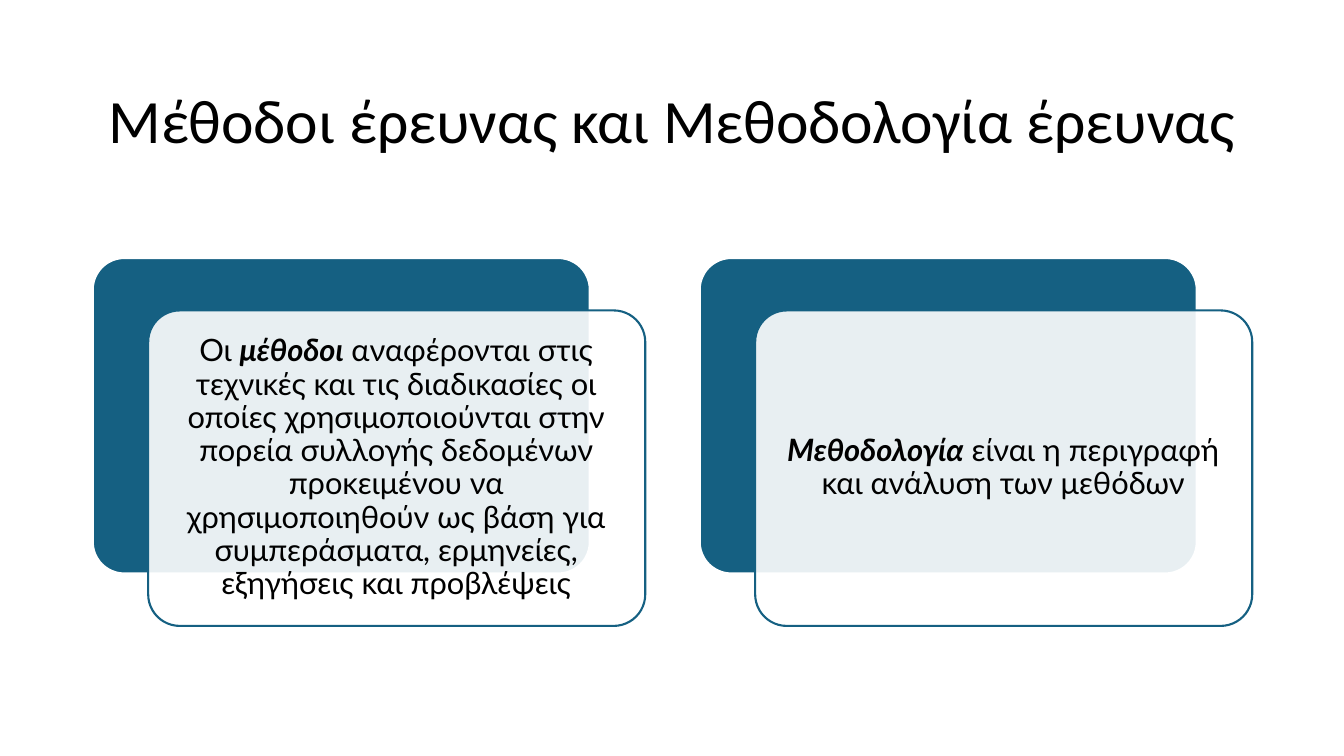
from lxml import etree
from pptx import Presentation
from pptx import util as u
from pptx.dml.color import RGBColor
from pptx.enum import shapes, text
from pptx.oxml.ns import qn

BLUE, WHITE, BLACK = "156082", "FFFFFF", "000000"
TITLE = {"name": "Calibri", "size": u.Pt(44)}
BODY = {"name": "Lato", "size": u.Pt(22)}
STRONG = {**BODY, "bold": True, "italic": True}

CARDS = [
    [("Οι ", BODY), ("μέθοδοι", STRONG),
     (" αναφέρονται στις τεχνικές και τις διαδικασίες οι οποίες "
      "χρησιμοποιούνται στην πορεία συλλογής δεδομένων προκειμένου να "
      "χρησιμοποιηθούν ως βάση για συμπεράσματα, ερμηνείες, εξηγήσεις "
      "και προβλέψεις", BODY)],
    [("Μεθοδολογία", STRONG),
     (" είναι η περιγραφή και ανάλυση των μεθόδων", BODY)],
]


def color(code):
    return RGBColor.from_string(code)


def add_box(slide, left, top, fill, line, alpha=None):
    """Rounded panel, with opacity in percent if given."""
    box = slide.shapes.add_shape(
        shapes.MSO_SHAPE.ROUNDED_RECTANGLE, u.Inches(left), u.Inches(top),
        u.Inches(4.93), u.Inches(3.13))
    box.adjustments[0] = 0.1
    box.shadow.inherit = False
    box.fill.solid()
    box.fill.fore_color.rgb = color(fill)
    box.line.color.rgb = color(line)
    box.line.width = u.Pt(1.5)
    if alpha:
        tint = box.fill._xPr.find(qn("a:solidFill"))[0]
        etree.SubElement(tint, qn("a:alpha"), val=str(alpha * 1000))


def add_text(slide, left, top, width, height, runs, pad):
    """Centred paragraph made of (words, format) runs."""
    frame = slide.shapes.add_textbox(
        *map(u.Inches, (left, top, width, height))).text_frame
    frame.word_wrap = True
    frame.vertical_anchor = text.MSO_ANCHOR.MIDDLE
    for side in ("left", "right", "top", "bottom"):
        setattr(frame, f"margin_{side}", u.Inches(pad))
    para = frame.paragraphs[0]
    para.alignment = text.PP_ALIGN.CENTER
    para.line_spacing = 0.9
    for words, style in runs:
        run = para.add_run()
        run.text = words
        run.font.color.rgb = color(BLACK)
        for key, value in style.items():
            setattr(run.font, key, value)


def add_card(slide, left, runs):
    """Blue panel, with a translucent text panel offset over it."""
    top = 2.56
    add_box(slide, left, top, BLUE, WHITE)
    add_box(slide, left + 0.55, top + 0.52, WHITE, BLUE, alpha=90)
    add_text(slide, left + 0.64, top + 0.61, 4.74, 2.95, runs, 0.09)


def main():
    deck = Presentation()
    deck.slide_width, deck.slide_height = u.Inches(13.33), u.Inches(7.5)
    slide = deck.slides.add_slide(deck.slide_layouts[6])

    # Title
    add_text(slide, 0.92, 0.61, 11.5, 1.24,
             [("Μέθοδοι έρευνας και Μεθοδολογία έρευνας", TITLE)], 0.05)

    # Two definition cards
    for i, runs in enumerate(CARDS):
        add_card(slide, 0.92 + 6.02 * i, runs)

    deck.save("out.pptx")


if __name__ == "__main__":
    main()
